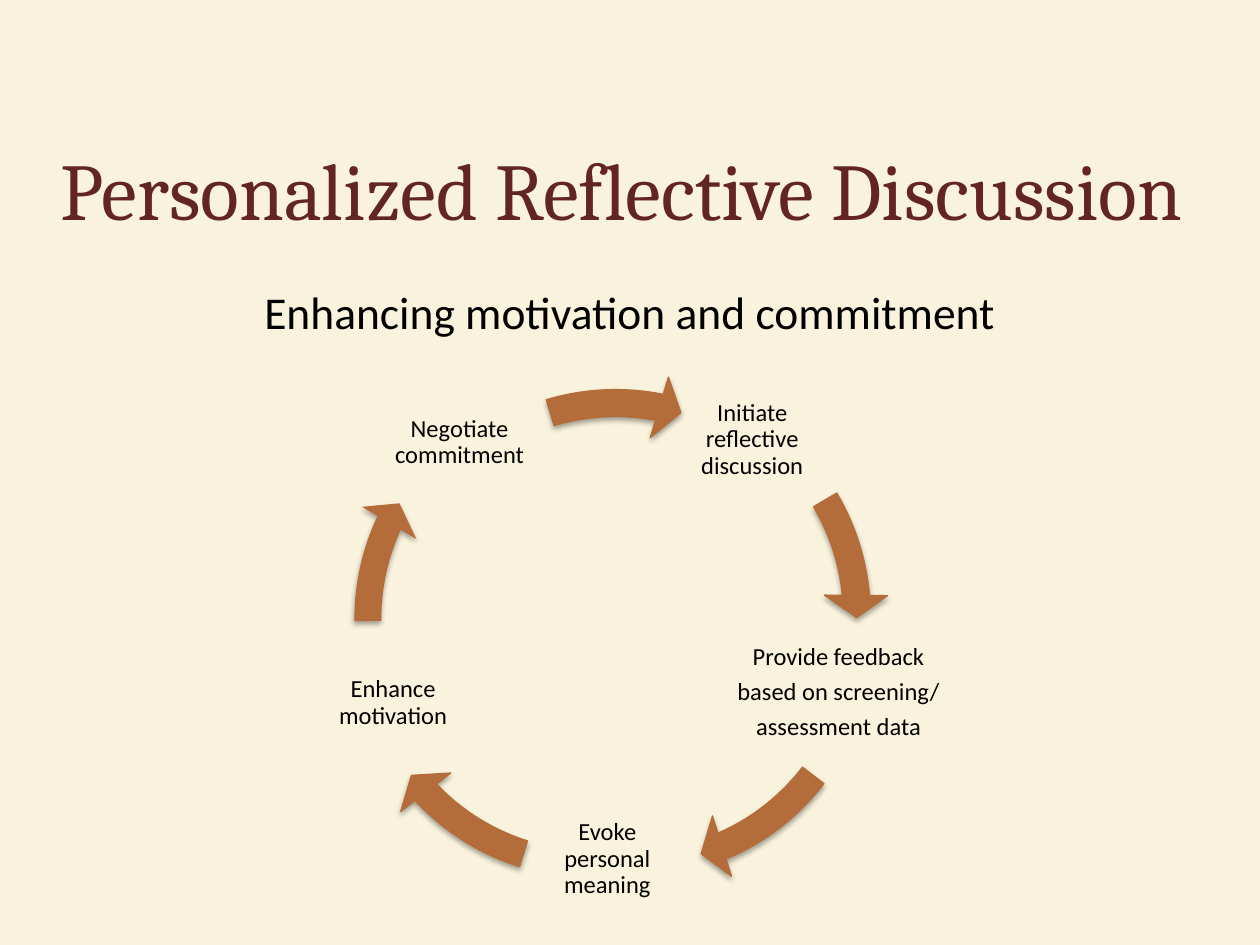
from lxml import etree
from pptx import Presentation
from pptx import util as u
from pptx.dml.color import RGBColor
from pptx.enum import shapes, text
from pptx.oxml.ns import qn

COLORS = {"paper": "F9F3DD", "heading": "632523", "body": "000000", "arrow": "B46C3A"}
HEADING = "Personalized Reflective Discussion "
SUBHEADING = "Enhancing motivation and commitment"

STEPS = [
    (["Initiate reflective discussion"], (13.77, 7.47, 2.79, 2.79)),
    (["Provide feedback", "based on screening/", "assessment data"], (14.76, 12.57, 4.29, 2.79)),
    (["Evoke personal meaning"], (10.85, 15.93, 2.79, 2.79)),
    (["Enhance motivation"], (6.53, 12.78, 2.79, 2.79)),
    (["Negotiate commitment"], (7.87, 8.33, 2.79, 1.19)),
]

RING = 10.44
ARROWS = [
    (7.47, 7.19, 212.95, 197.65, True),
    (7.54, 7.62, 40.16, 22.52, True),
    (7.19, 7.49, 168.67, 151.97, True),
    (6.71, 7.62, 82.13, 64.48, True),
    (6.78, 7.26, 123.0, 107.7, False),
]


def color(name):
    return RGBColor.from_string(COLORS[name])


def write(frame, lines, size, font, ink, inset, anchor, spacing, after=0):
    frame.word_wrap = True
    frame.auto_size = text.MSO_AUTO_SIZE.NONE
    frame.vertical_anchor = anchor
    frame.margin_left = frame.margin_right = u.Cm(inset)
    frame.margin_top = frame.margin_bottom = u.Cm(inset)
    for index, line in enumerate(lines):
        paragraph = frame.add_paragraph() if index else frame.paragraphs[0]
        paragraph.alignment = text.PP_ALIGN.CENTER
        paragraph.line_spacing = spacing
        paragraph.space_before = u.Pt(0)
        paragraph.space_after = u.Pt(after)
        run = paragraph.add_run()
        run.text = line
        run.font.size = u.Pt(size)
        run.font.name = font
        run.font.color.rgb = color(ink)


def add_shadow(shape):
    shape.shadow.inherit = False
    effects = shape._element.spPr.find(qn("a:effectLst"))
    shadow = etree.SubElement(effects, qn("a:outerShdw"), blurRad=str(u.Pt(3.1)),
                              dist=str(u.Pt(1.8)), dir="5400000", rotWithShape="0")
    tint = etree.SubElement(shadow, qn("a:srgbClr"), val="000000")
    etree.SubElement(tint, qn("a:alpha"), val="35000")


def add_arrow(slide, left, top, end, start, outlined):
    arrow = slide.shapes.add_shape(shapes.MSO_SHAPE.CIRCULAR_ARROW,
                                   u.Cm(left), u.Cm(top), u.Cm(RING), u.Cm(RING))
    for index, value in enumerate((0.052, 3.355, end, start, 0.061)):
        arrow.adjustments[index] = value
    arrow.fill.solid()
    arrow.fill.fore_color.rgb = color("arrow")
    if outlined:
        arrow.line.color.rgb = color("arrow")
        arrow.line.width = u.Pt(0.75)
    else:
        arrow.line.fill.background()
    add_shadow(arrow)


def main():
    deck = Presentation()
    deck.slide_width, deck.slide_height = u.Cm(25.4), u.Cm(19.05)
    slide = deck.slides.add_slide(deck.slide_layouts[5])
    slide.background.fill.solid()
    slide.background.fill.fore_color.rgb = color("paper")

    heading = slide.shapes.title
    heading.left, heading.top = u.Cm(0), u.Cm(2.34)
    heading.width, heading.height = deck.slide_width, u.Cm(3.18)
    write(heading.text_frame, [HEADING], 46, "Cambria", "heading", 0.25,
          text.MSO_ANCHOR.MIDDLE, u.Pt(48))

    subheading = slide.shapes.add_textbox(u.Cm(0), u.Cm(5.59), deck.slide_width, u.Cm(1.6))
    write(subheading.text_frame, [SUBHEADING], 26, "Calibri", "body", 0.13,
          text.MSO_ANCHOR.TOP, 1.0, 24)

    for arrow in ARROWS:
        add_arrow(slide, *arrow)
    for lines, place in STEPS:
        step = slide.shapes.add_textbox(*map(u.Cm, place))
        write(step.text_frame, lines, 14, "Calibri", "body", 0.05,
              text.MSO_ANCHOR.MIDDLE, 0.9, 4.9)

    deck.save("out.pptx")


if __name__ == "__main__":
    main()
